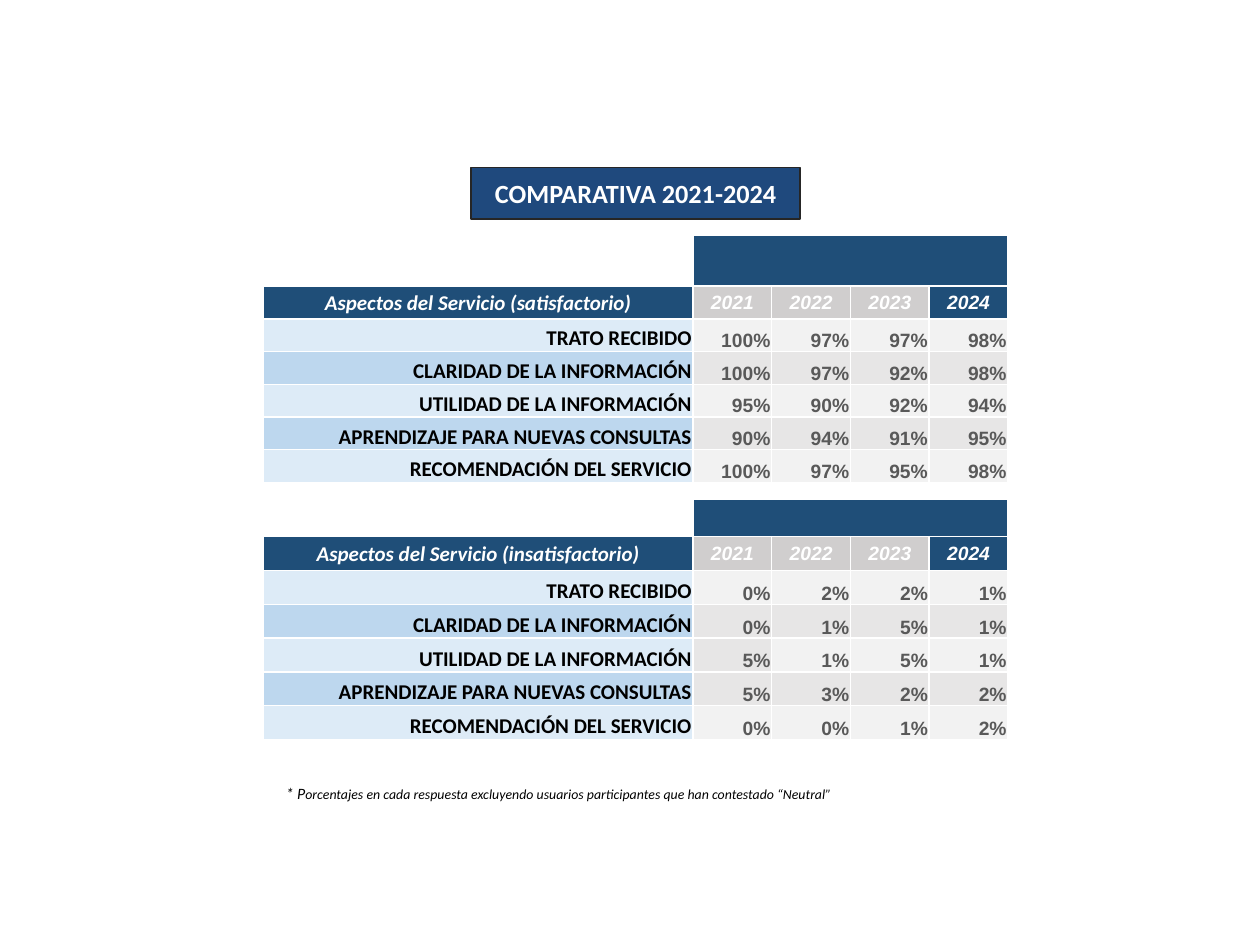
import pptx
import pptx.dml.color
import pptx.enum.shapes
import pptx.enum.text
import pptx.oxml.ns
import pptx.util
from lxml import etree

WIDE, HIGH = 10, 7.5
NAVY, GREY, WHITE, BLACK = "1F4E78", "D0CECE", "FFFFFF", "000000"
LABELS = ("DDEBF7", "BDD7EE")
SHADES = ("F2F2F2", "E7E6E6")
YEARS = ("2021", "2022", "2023", "2024")
COLS = (3.41,) + (0.625,) * len(YEARS)
ASPECTS = (
    "TRATO RECIBIDO",
    "CLARIDAD DE LA INFORMACIÓN",
    "UTILIDAD DE LA INFORMACIÓN",
    "APRENDIZAJE PARA NUEVAS CONSULTAS",
    "RECOMENDACIÓN DEL SERVICIO",
)
GOOD = ((100, 97, 97, 98), (100, 97, 92, 98), (95, 90, 92, 94),
        (90, 94, 91, 95), (100, 97, 95, 98))
BAD = ((0, 2, 2, 1), (0, 1, 5, 1), (5, 1, 5, 1), (5, 3, 2, 2), (0, 0, 1, 2))

Inch = pptx.util.Inches
Align = pptx.enum.text.PP_ALIGN
Anchor = pptx.enum.text.MSO_ANCHOR


def color(code):
    return pptx.dml.color.RGBColor.from_string(code)


def place(box):
    return [Inch(n) for n in box]


def write(para, text, size, face="Calibri", tint=BLACK, bold=False, slant=False):
    run = para.add_run()
    run.text = text
    font = run.font
    font.size, font.name = pptx.util.Pt(size), face
    font.bold, font.italic = bold, slant
    font.color.rgb = color(tint)


def edge(cell):
    """Give the cell a white one-point border on all sides."""
    props = cell._tc.get_or_add_tcPr()
    qn = pptx.oxml.ns.qn
    for side in "LRTB":
        line = etree.SubElement(props, qn("a:ln" + side), w="12700")
        fill = etree.SubElement(line, qn("a:solidFill"))
        etree.SubElement(fill, qn("a:srgbClr"), val=WHITE)


def style(cell, fill=None, anchor=Anchor.MIDDLE):
    edge(cell)
    if fill:
        cell.fill.solid()
        cell.fill.fore_color.rgb = color(fill)
    else:
        cell.fill.background()
    cell.margin_left = cell.margin_right = cell.margin_top = Inch(0.01)
    cell.margin_bottom = 0
    cell.vertical_anchor = anchor


def blank(cell, fill=None):
    style(cell, fill)
    end = cell.text_frame.paragraphs[0]._p.get_or_add_endParaRPr()
    end.set("sz", "1100")


def head(cell, text, fill, size, face):
    style(cell, fill)
    para = cell.text_frame.paragraphs[0]
    para.alignment = Align.CENTER
    write(para, text, size, face, WHITE, True, True)


def entry(cell, text, fill, size, face, tint):
    style(cell, fill, Anchor.BOTTOM)
    para = cell.text_frame.paragraphs[0]
    para.alignment = Align.RIGHT
    write(para, text, size, face, tint, True)


def survey(slide, box, title, data, top, spare=0, marked=()):
    """Add a table; top is its band height, spare its empty rows below,
    and marked its cells with the darker shade."""
    count = len(data) + 2 + spare
    grid = slide.shapes.add_table(count, len(COLS), *place(box)).table
    grid.first_row = grid.horz_banding = False
    for col, wide in zip(grid.columns, COLS):
        col.width = Inch(wide)
    for num, row in enumerate(grid.rows):
        row.height = Inch(top if num == 0 else (box[3] - top) / (count - 1))

    for col in range(len(COLS)):
        blank(grid.cell(0, col), NAVY if col else None)
        for row in range(count - spare, count):
            blank(grid.cell(row, col))
    grid.cell(0, 1).merge(grid.cell(0, len(YEARS)))

    head(grid.cell(1, 0), title, NAVY, 12, "Calibri")
    for col, year in enumerate(YEARS, 1):
        fill = NAVY if year == YEARS[-1] else GREY
        head(grid.cell(1, col), year, fill, 11, "Arial")

    for num, (name, rates) in enumerate(zip(ASPECTS, data)):
        row, odd = num + 2, num % 2
        entry(grid.cell(row, 0), name, LABELS[odd], 12, "Calibri", BLACK)
        for col, rate in enumerate(rates, 1):
            fill = SHADES[odd or (row, col) in marked]
            entry(grid.cell(row, col), f"{rate}%", fill, 11, "Arial", "595959")


def banner(slide, box):
    kind = pptx.enum.shapes.MSO_SHAPE.RECTANGLE
    shape = slide.shapes.add_shape(kind, *place(box))
    shape.shadow.inherit = False
    shape.fill.solid()
    shape.fill.fore_color.rgb = color("1F497D")
    shape.line.color.rgb = color("262626")
    shape.line.width = pptx.util.Pt(1)
    frame = shape.text_frame
    frame.word_wrap = True
    frame.vertical_anchor = Anchor.MIDDLE
    frame.margin_left = frame.margin_right = Inch(0.07)
    frame.margin_top = frame.margin_bottom = Inch(0.04)
    para = frame.paragraphs[0]
    para.alignment = Align.CENTER
    write(para, "COMPARATIVA 2021-2024", 15, tint=WHITE, bold=True)


def note(slide, box):
    frame = slide.shapes.add_textbox(*place(box)).text_frame
    frame.word_wrap = True
    frame.auto_size = pptx.enum.text.MSO_AUTO_SIZE.SHAPE_TO_FIT_TEXT
    para = frame.paragraphs[0]
    para.alignment = Align.JUSTIFY
    write(para, "* P", 9, slant=True)
    write(para, "orcentajes en cada respuesta excluyendo usuarios "
          "participantes que han contestado “Neutral”", 7.9, slant=True)


def main():
    deck = pptx.Presentation()
    deck.slide_width, deck.slide_height = Inch(WIDE), Inch(HIGH)
    slide = deck.slides.add_slide(deck.slide_layouts[6])
    left, wide = 2.09, sum(COLS)
    banner(slide, (3.74, 1.33, 2.61, 0.41))
    note(slide, (2.17, 6.17, 4.55, 0.25))
    survey(slide, (left, 1.87, wide, 2.22),
           "Aspectos del Servicio (satisfactorio)", GOOD, 0.4, spare=1)
    survey(slide, (left, 3.96, wide, 1.91),
           "Aspectos del Servicio (insatisfactorio)", BAD, 0.3, marked={(4, 1)})
    deck.save("out.pptx")


if __name__ == "__main__":
    main()
